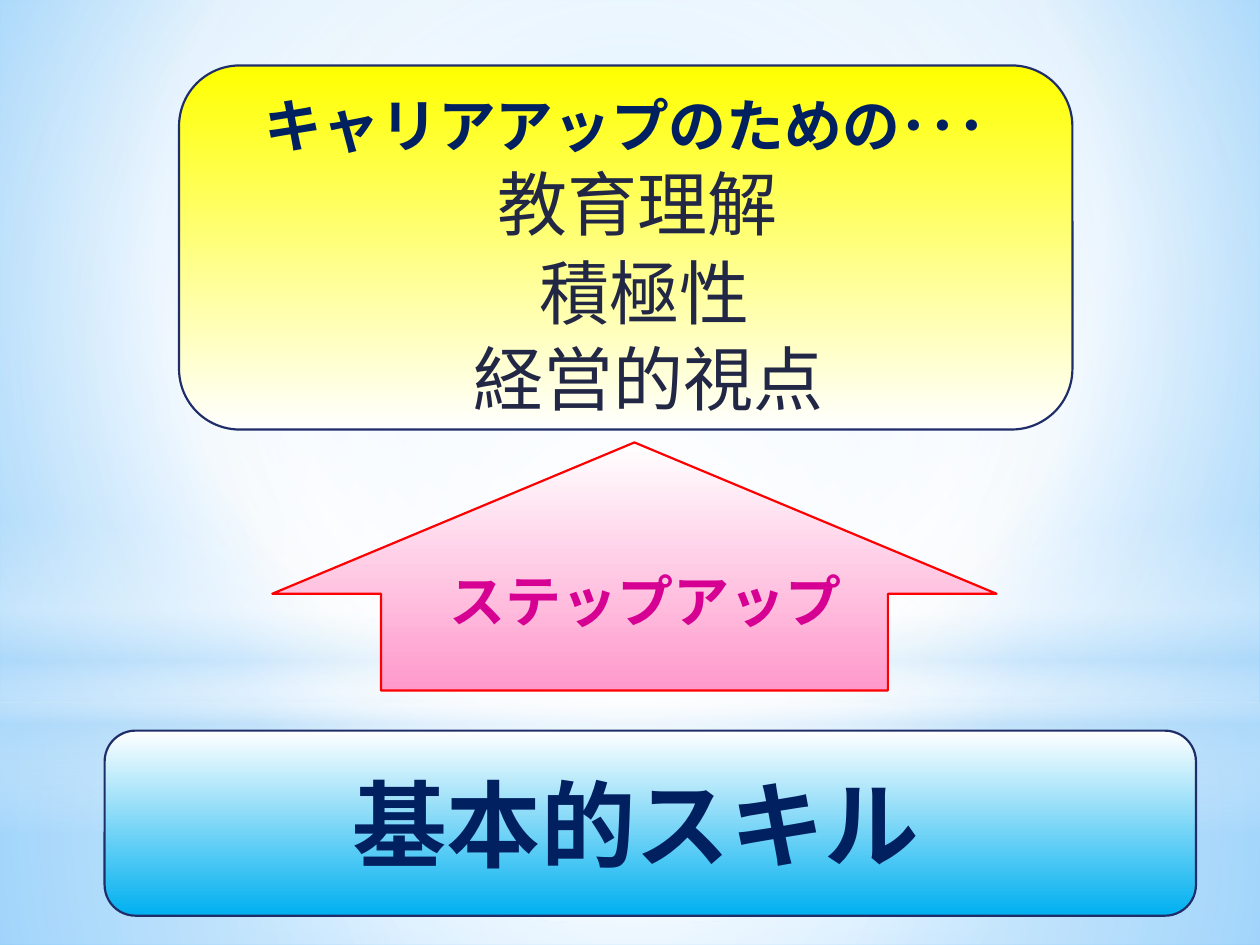
from dataclasses import dataclass

import lxml.etree
import pptx
import pptx.dml.color
import pptx.enum.shapes
import pptx.enum.text
import pptx.oxml.ns
import pptx.util

Cm = pptx.util.Cm
Kind = pptx.enum.shapes.MSO_SHAPE
qn = pptx.oxml.ns.qn

FONT = "Noto Sans CJK JP"
WIDE, HIGH = 25.4, 19.05
HUES = {
    "white": "FFFFFF", "mist": "B4DCFA", "sky": "9ED5FF", "azure": "5BB9FF",
    "cyan": "00B0F0", "pink": "FF99CC", "yellow": "FFFF00", "red": "FF0000",
    "edge": "1F2E69", "navy": "002060", "ink": "212745", "rose": "D60093",
}
MID = (50, 50, 50, 50)


@dataclass
class Blend:
    """Stops are (position %, colour, opacity %); focus is l, t, r, b in %."""
    stops: list[tuple[int, str, int]]
    focus: tuple[int, int, int, int] | None = None


@dataclass
class Panel:
    kind: int
    box: tuple[float, float, float, float]
    blend: Blend
    line: str | None = None
    adj: tuple[float, ...] = ()


@dataclass
class Label:
    text: str
    box: tuple[float, float, float, float]
    size: int
    hue: str
    bold: bool = False
    wrap: bool = True


def ramp(top: str, low: str) -> Blend:
    return Blend([(0, top, 100), (100, low, 100)])


def glow(mid: int, near: int, half: int) -> Blend:
    return Blend([(0, "white", near), (mid, "white", half), (100, "mist", 79)], MID)


BACK = Blend([(0, "sky", 100), (60, "white", 100), (100, "azure", 100)],
             (20, 10, 20, 60))
BAND = Blend([(0, "white", 0), (29, "white", 30), (45, "mist", 40),
              (55, "white", 26), (65, "mist", 60), (100, "white", 0)])
HALO = Blend([(0, "white", 100), (56, "white", 0)], MID)

PANELS = [
    Panel(Kind.RECTANGLE, (0, 14.17, WIDE, 4.88), glow(37, 91, 76)),
    Panel(Kind.RECTANGLE, (0, 0, WIDE, 14.17), glow(48, 89, 62)),
    Panel(Kind.RECTANGLE, (0, 10.46, WIDE, 6.35), BAND),
    Panel(Kind.OVAL, (0, 4.45, WIDE, 14.17), HALO),
    Panel(Kind.UP_ARROW, (5.49, 8.92, 14.6, 5), ramp("white", "pink"),
          "red", (0.7, 0.61)),
    Panel(Kind.ROUNDED_RECTANGLE, (2.11, 14.73, 22, 3.73),
          ramp("white", "cyan"), "edge"),
]
GOAL = Panel(Kind.ROUNDED_RECTANGLE, (3.61, 1.32, 18.01, 7.34),
             ramp("yellow", "white"), "edge")
HEAD = Label("キャリアアップのための･･･", GOAL.box, 33, "navy", True)
LABELS = [
    Label("教育理解", (7.49, 3.12, 10.72, 1.96), 40, "ink"),
    Label("積極性", (7.49, 4.9, 11.02, 1.96), 40, "ink"),
    Label("経営的視点", (7.72, 6.63, 10.72, 1.96), 40, "ink"),
    Label("ステップアップ", (8.31, 11.3, 9.4, 1.63), 32, "rose", True),
    Label("基本的スキル", (6.76, 15.32, 12.12, 2.57), 54, "navy", True, False),
]


def rgb(hue: str) -> pptx.dml.color.RGBColor:
    return pptx.dml.color.RGBColor.from_string(HUES[hue])


def shade(fill, root, blend: Blend) -> None:
    """Give the fill found under root the stops and direction of blend."""
    add = lxml.etree.SubElement
    fill.gradient()
    grad = root.find(".//" + qn("a:gradFill"))
    for child in list(grad):
        grad.remove(child)
    stops = add(grad, qn("a:gsLst"))
    for pos, hue, alpha in blend.stops:
        stop = add(stops, qn("a:gs"), pos=str(pos * 1000))
        tint = add(stop, qn("a:srgbClr"), val=HUES[hue])
        if alpha < 100:
            add(tint, qn("a:alpha"), val=str(alpha * 1000))
    if blend.focus:
        way = add(grad, qn("a:path"), path="circle")
        sides = {s: str(v * 1000) for s, v in zip("ltrb", blend.focus)}
        add(way, qn("a:fillToRect"), **sides)
    else:
        add(grad, qn("a:lin"), ang="5400000", scaled="0")


def draw(slide, panel: Panel):
    shape = slide.shapes.add_shape(panel.kind, *map(Cm, panel.box))
    shape.shadow.inherit = False
    for i, value in enumerate(panel.adj):
        shape.adjustments[i] = value
    shade(shape.fill, shape._element.spPr, panel.blend)
    if panel.line:
        shape.line.color.rgb = rgb(panel.line)
        shape.line.width = pptx.util.Pt(1.25)
    else:
        shape.line.fill.background()
    return shape


def write(frame, label: Label) -> None:
    frame.text = label.text
    frame.word_wrap = label.wrap
    frame.vertical_anchor = pptx.enum.text.MSO_ANCHOR.TOP
    para = frame.paragraphs[0]
    para.alignment = pptx.enum.text.PP_ALIGN.CENTER
    run = para.runs[0]
    run.font.size = pptx.util.Pt(label.size)
    run.font.bold = label.bold
    run.font.name = FONT
    run.font.color.rgb = rgb(label.hue)
    east = lxml.etree.SubElement(run.font._element, qn("a:ea"))
    east.set("typeface", FONT)


def main() -> None:
    deck = pptx.Presentation()
    deck.slide_width, deck.slide_height = Cm(WIDE), Cm(HIGH)
    slide = deck.slides.add_slide(deck.slide_layouts[6])
    shade(slide.background.fill, slide._element, BACK)
    for panel in PANELS:
        draw(slide, panel)
    write(draw(slide, GOAL).text_frame, HEAD)
    for label in LABELS:
        frame = slide.shapes.add_textbox(*map(Cm, label.box)).text_frame
        write(frame, label)
        frame.auto_size = pptx.enum.text.MSO_AUTO_SIZE.SHAPE_TO_FIT_TEXT
    deck.save("out.pptx")


if __name__ == "__main__":
    main()
